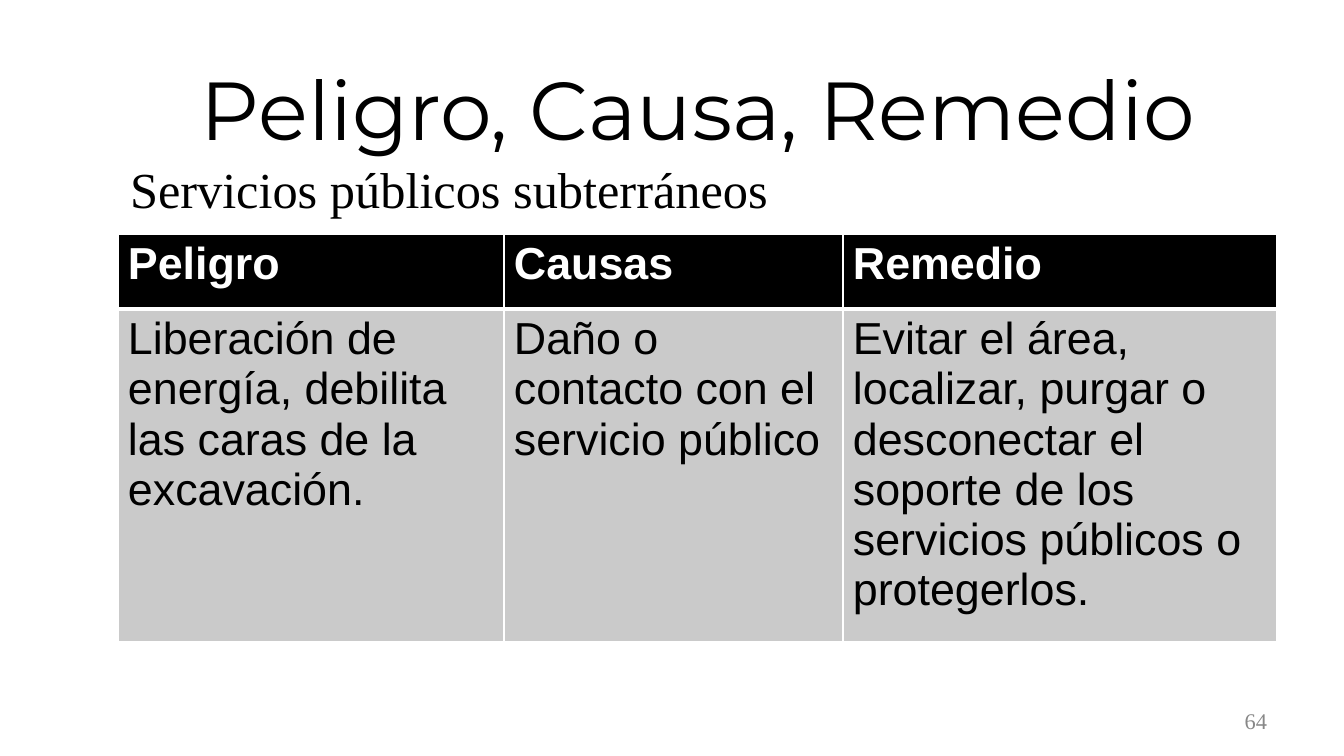
from lxml import etree
from pptx import Presentation
from pptx.dml.color import RGBColor
from pptx.enum.text import MSO_ANCHOR, PP_ALIGN
from pptx.oxml.ns import qn
from pptx.util import Pt

LEFT, CENTER, RIGHT = PP_ALIGN.LEFT, PP_ALIGN.CENTER, PP_ALIGN.RIGHT
TOP, MIDDLE = MSO_ANCHOR.TOP, MSO_ANCHOR.MIDDLE
TITLE_ONLY = 5

COLORS = {"black": "000000", "white": "FFFFFF", "body": "CACACA", "number": "888888"}

TITLE = "Peligro, Causa, Remedio"
SUBTITLE = "Servicios públicos subterráneos"
NUMBER = "64"
ROWS = [
    ("Peligro", "Causas", "Remedio"),
    (
        "Liberación de energía, debilita las caras de la excavación.",
        "Daño o contacto con el servicio público",
        "Evitar el área, localizar, purgar o desconectar el soporte de los "
        "servicios públicos o protegerlos.",
    ),
]

TITLE_BOX = (118, 35, 1159, 146)
SUBTITLE_BOX = (107, 153, 727, 88)
NUMBER_BOX = (964, 701, 313, 40)
TABLE_LEFT, TABLE_TOP = 118, 234
COL_WIDTHS = (386, 339, 434)
ROW_HEIGHTS = (75, 294)
INSET_X, INSET_Y, SUBTITLE_INSET = 10, 5, 23

TITLE_FONT = {"name": "Montserrat", "size": Pt(58.7), "bold": False}
SUBTITLE_FONT = {"name": "Times New Roman", "size": Pt(36)}
NUMBER_FONT = {"name": "Times New Roman", "size": Pt(16)}
ROW_STYLES = [
    ({"name": "Arial", "size": Pt(32), "bold": True}, "white", "black",
     {"lnL": 1, "lnR": 1, "lnT": 1, "lnB": 3}),
    ({"name": "Arial", "size": Pt(32), "bold": False}, "black", "body",
     {"lnL": 1, "lnR": 1, "lnT": 3, "lnB": 1}),
]


def px(n):
    return round(n * 914400 / 100.8)


def rgb(name):
    return RGBColor.from_string(COLORS[name])


def write(tf, text, font, color, align=LEFT):
    p = tf.paragraphs[0]
    p.alignment = align
    r = p.add_run()
    r.text = text
    for key, value in font.items():
        setattr(r.font, key, value)
    r.font.color.rgb = rgb(color)


def set_margins(target, left=INSET_X):
    target.margin_left, target.margin_right = px(left), px(INSET_X)
    target.margin_top = target.margin_bottom = px(INSET_Y)


def set_frame(tf, anchor, left=INSET_X):
    tf.word_wrap = True
    tf.vertical_anchor = anchor
    set_margins(tf, left)


def add_text(slide, box, text, font, color, align, anchor, left=INSET_X):
    tf = slide.shapes.add_textbox(*map(px, box)).text_frame
    set_frame(tf, anchor, left)
    write(tf, text, font, color, align)


def set_borders(cell, widths):
    tc_pr = cell._tc.get_or_add_tcPr()
    for i, (tag, width) in enumerate(widths.items()):
        ln = etree.Element(qn(f"a:{tag}"), w=str(Pt(width)))
        fill = etree.SubElement(ln, qn("a:solidFill"))
        etree.SubElement(fill, qn("a:srgbClr"), val=COLORS["white"])
        tc_pr.insert(i, ln)


def add_table(slide):
    table = slide.shapes.add_table(
        len(ROWS), len(COL_WIDTHS), px(TABLE_LEFT), px(TABLE_TOP),
        px(sum(COL_WIDTHS)), px(sum(ROW_HEIGHTS))).table
    for col, width in zip(table.columns, COL_WIDTHS):
        col.width = px(width)
    for row, height, texts, style in zip(table.rows, ROW_HEIGHTS, ROWS, ROW_STYLES):
        row.height = px(height)
        font, color, fill, borders = style
        for cell, text in zip(row.cells, texts):
            set_margins(cell)
            cell.fill.solid()
            cell.fill.fore_color.rgb = rgb(fill)
            set_borders(cell, borders)
            write(cell.text_frame, text, font, color)


def main():
    prs = Presentation()
    prs.slide_width, prs.slide_height = px(1344), px(756)
    slide = prs.slides.add_slide(prs.slide_layouts[TITLE_ONLY])

    title = slide.shapes.title
    title.left, title.top, title.width, title.height = map(px, TITLE_BOX)
    set_frame(title.text_frame, MIDDLE)
    write(title.text_frame, TITLE, TITLE_FONT, "black", CENTER)

    add_text(slide, SUBTITLE_BOX, SUBTITLE, SUBTITLE_FONT, "black", LEFT, TOP,
             SUBTITLE_INSET)
    add_table(slide)
    add_text(slide, NUMBER_BOX, NUMBER, NUMBER_FONT, "number", RIGHT, MIDDLE)
    prs.save("out.pptx")


if __name__ == "__main__":
    main()
